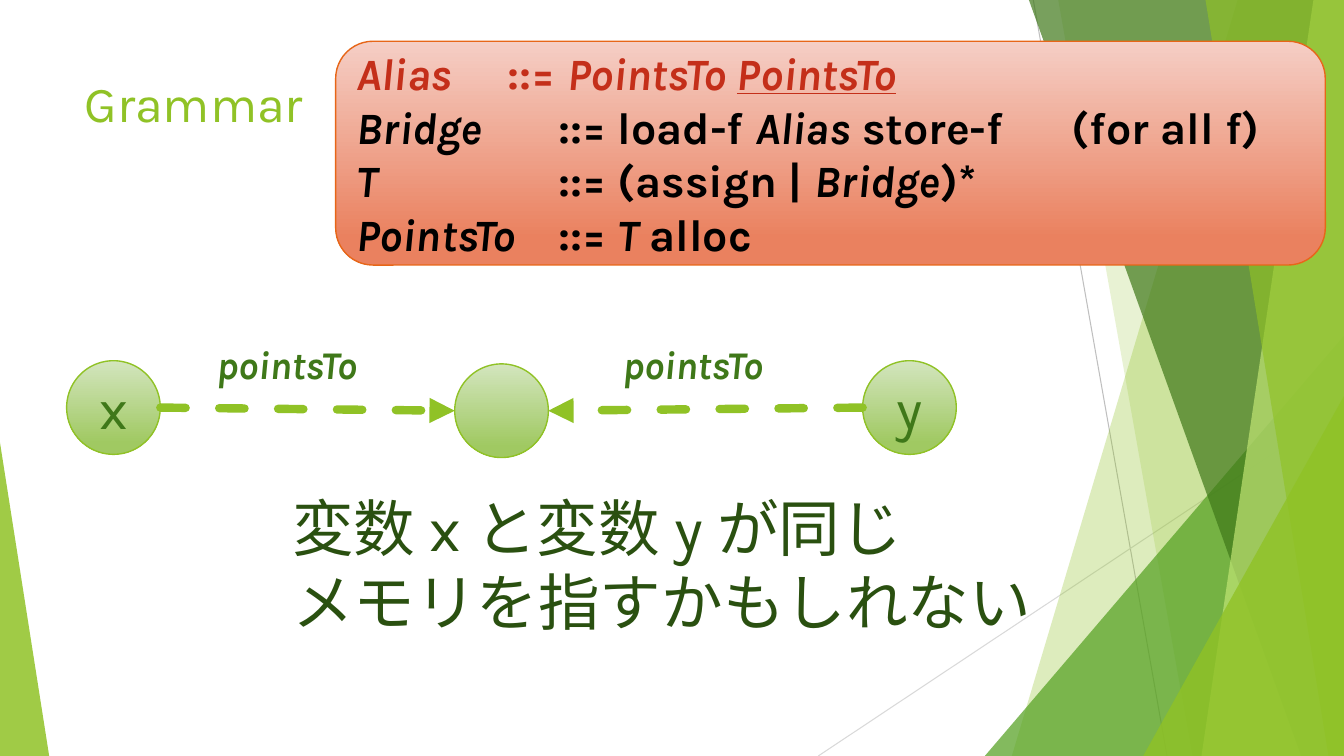
from lxml import etree
from pptx import Presentation
from pptx.dml.color import RGBColor
from pptx.enum.dml import MSO_LINE
from pptx.enum.shapes import MSO_CONNECTOR, MSO_SHAPE
from pptx.enum.text import MSO_ANCHOR, PP_ALIGN
from pptx.oxml.ns import qn
from pptx.util import Cm, Pt

STRAIGHT = MSO_CONNECTOR.STRAIGHT
OVAL = MSO_SHAPE.OVAL
ROUNDED = MSO_SHAPE.ROUNDED_RECTANGLE
TRIANGLE = MSO_SHAPE.ISOSCELES_TRIANGLE
DASH = MSO_LINE.DASH
LEFT, CENTER = PP_ALIGN.LEFT, PP_ALIGN.CENTER
TOP, MIDDLE = MSO_ANCHOR.TOP, MSO_ANCHOR.MIDDLE

FONT = "Karla"
LIME = RGBColor(0x90, 0xC2, 0x26)
PALE_LIME = RGBColor(0xC0, 0xE4, 0x74)
GREEN = RGBColor(0x54, 0xA0, 0x21)
DARK_GREEN = RGBColor(0x3F, 0x78, 0x19)
DEEP_GREEN = RGBColor(0x2A, 0x50, 0x10)
NODE_LIGHT = RGBColor(0xD3, 0xE5, 0xBE)
NODE_DARK = RGBColor(0xA0, 0xC9, 0x62)
PANEL_LIGHT = RGBColor(0xF5, 0xCE, 0xC5)
PANEL_DARK = RGBColor(0xEA, 0x81, 0x5F)
ORANGE = RGBColor(0xE7, 0x66, 0x18)
RED = RGBColor(0xC4, 0x2F, 0x1A)
BLACK = RGBColor(0x00, 0x00, 0x00)
GREY = RGBColor(0xBF, 0xBF, 0xBF)
LIGHT_GREY = RGBColor(0xD9, 0xD9, 0xD9)

SLIDE_WIDTH, SLIDE_HEIGHT = 33.87, 19.05


def add_run(paragraph, text, size, color, bold=False, italic=False, underline=False):
    run = paragraph.add_run()
    run.text = text
    font = run.font
    font.name, font.size, font.color.rgb = FONT, Pt(size), color
    font.bold, font.italic, font.underline = bold, italic, underline


def add_line(slide, start, end, color, width):
    connector = slide.shapes.add_connector(STRAIGHT, *start, *end)
    connector.line.color.rgb = color
    connector.line.width = Pt(width)
    etree.SubElement(connector._element.spPr, qn("a:effectLst"))
    return connector


def fill_translucent(shape, color, opacity):
    shape.shadow.inherit = False
    shape.fill.solid()
    shape.fill.fore_color.rgb = color
    shape.line.fill.background()
    color_element = shape._element.spPr.find(qn("a:solidFill"))[0]
    etree.SubElement(color_element, qn("a:alpha"), val=str(opacity * 1000))


def fill_gradient(shape, light, dark, outline):
    shape.shadow.inherit = False
    shape.fill.gradient()
    shape.fill.gradient_angle = 270
    for stop, color, position in zip(shape.fill.gradient_stops, (light, dark), (0, 0.88)):
        stop.color.rgb = color
        stop.position = position
    shape.line.color.rgb = outline
    shape.line.width = Pt(1)


def add_band(slide, box, top_x, bottom_x, color, opacity):
    left, top, width, height = box
    right, bottom = left + width, top + height
    builder = slide.shapes.build_freeform(Cm(left + top_x), Cm(top))
    builder.add_line_segments([
        (Cm(right), Cm(top)), (Cm(right), Cm(bottom)), (Cm(left + bottom_x), Cm(bottom)),
    ])
    fill_translucent(builder.convert_to_shape(), color, opacity)


def add_corner(slide, box, width, height, apex, color, opacity):
    left, top, box_width, box_height = box
    corner = slide.shapes.add_shape(
        TRIANGLE, Cm(left + apex * (box_width - width)), Cm(top + box_height - height),
        Cm(width), Cm(height))
    corner.adjustments[0] = apex
    fill_translucent(corner, color, opacity)


def add_backdrop(slide, box):
    left, top, width, height = box
    for start_x, start_y, end_x, color in (
            (26.04, 0, 29.41, GREY), (width, 10.24, 20.62, LIGHT_GREY)):
        add_line(slide, (Cm(left + start_x), Cm(top + start_y)),
                 (Cm(left + end_x), Cm(top + height)), color, 0.75)
    add_band(slide, box, 31.19, 25.5, LIME, 30)
    add_band(slide, box, 26.67, 30.05, LIME, 20)
    add_corner(slide, box, 9.05, 10.59, 1, GREEN, 72)
    add_band(slide, box, 25.93, 32.79, DARK_GREEN, 70)
    add_band(slide, box, 33.1, 30.28, PALE_LIME, 70)
    add_band(slide, box, 30.38, 33.48, LIME, 65)
    add_corner(slide, box, 5.06, 9.07, 1, LIME, 80)
    add_corner(slide, box, 1.24, 7.9, 0, LIME, 85)


def add_title(slide, box):
    title = slide.shapes.title
    title.left, title.top, title.width, title.height = map(Cm, box)
    title.text_frame.vertical_anchor = TOP
    paragraph = title.text_frame.paragraphs[0]
    paragraph.alignment = LEFT
    add_run(paragraph, "Grammar", 36, LIME)


def add_text(slide, box, lines, size, color, emphasis=False):
    frame = slide.shapes.add_textbox(*map(Cm, box)).text_frame
    frame.word_wrap = True
    for index, line in enumerate(lines):
        paragraph = frame.add_paragraph() if index else frame.paragraphs[0]
        add_run(paragraph, line, size, color, bold=emphasis, italic=emphasis)


def add_node(slide, left, top, label):
    node = slide.shapes.add_shape(OVAL, Cm(left), Cm(top), Cm(2.36), Cm(2.36))
    fill_gradient(node, NODE_LIGHT, NODE_DARK, LIME)
    if label:
        node.text_frame.vertical_anchor = MIDDLE
        paragraph = node.text_frame.paragraphs[0]
        paragraph.alignment = CENTER
        add_run(paragraph, label, 40, DARK_GREEN)
    return node


def add_dashed_arrow(slide, start, end):
    arrow = add_line(slide, start, end, LIME, 6)
    arrow.line.dash_style = DASH
    line_element = arrow._element.spPr.find(qn("a:ln"))
    line_element.set("cap", "rnd")
    etree.SubElement(line_element, qn("a:tailEnd"), type="triangle")


def add_points_to_diagram(slide, box):
    left, top, width, height = box
    x_node = add_node(slide, left, top + 0.63, "x")
    memory = add_node(slide, left + 9.78, top + 0.71, "")
    y_node = add_node(slide, left + width - 2.36, top + 0.63, "y")
    variable_y = x_node.top + x_node.height // 2
    memory_y = memory.top + memory.height // 2
    add_dashed_arrow(slide, (x_node.left + x_node.width, variable_y), (memory.left, memory_y))
    add_dashed_arrow(slide, (y_node.left, variable_y), (memory.left + memory.width, memory_y))
    for label_left in (3.53, 13.76):
        add_text(slide, (left + label_left, top, 4.65, 1.45), ["pointsTo"], 28, DARK_GREEN, True)


def set_tab_stops(paragraph, positions):
    tab_list = etree.SubElement(paragraph._p.get_or_add_pPr(), qn("a:tabLst"))
    for position in positions:
        etree.SubElement(tab_list, qn("a:tab"), pos=str(Cm(position)), algn="l")


def add_grammar_panel(slide, box):
    panel = slide.shapes.add_shape(ROUNDED, *map(Cm, box))
    fill_gradient(panel, PANEL_LIGHT, PANEL_DARK, ORANGE)
    frame = panel.text_frame
    frame.word_wrap = True
    frame.vertical_anchor = MIDDLE
    rules = [
        (RED, 3.81, ["Alias", "\t::= ", "PointsTo ", "PointsTo"]),
        (BLACK, 5.08, ["Bridge", "\t::= load-f ", "Alias", " store-f\t(for all f)"]),
        (BLACK, 5.08, ["T", "\t::= (assign | ", "Bridge", ")*"]),
        (BLACK, 5.08, ["PointsTo", "\t::= ", "T ", "alloc"]),
    ]
    for index, (color, tab_stop, parts) in enumerate(rules):
        paragraph = frame.add_paragraph() if index else frame.paragraphs[0]
        paragraph.alignment = LEFT
        set_tab_stops(paragraph, (tab_stop, 18.03))
        for position, part in enumerate(parts):
            underline = color == RED and position == 3
            add_run(paragraph, part, 32, color, True, position % 2 == 0 or underline, underline)


def main():
    presentation = Presentation()
    presentation.slide_width = Cm(SLIDE_WIDTH)
    presentation.slide_height = Cm(SLIDE_HEIGHT)
    slide = presentation.slides.add_slide(presentation.slide_layouts[5])
    add_backdrop(slide, (0, 0, SLIDE_WIDTH, SLIDE_HEIGHT))
    add_title(slide, (1.88, 1.7, 23.88, 3.66))
    add_points_to_diagram(slide, (1.68, 8.46, 22.42, 3.07))
    add_text(slide, (7.11, 12.22, 20.5, 4.01),
             ["変数 x と変数 y が同じ", "メモリを指すかもしれない"], 44, DEEP_GREEN)
    add_grammar_panel(slide, (8.46, 1.04, 24.94, 5.64))
    presentation.save("out.pptx")


if __name__ == "__main__":
    main()
